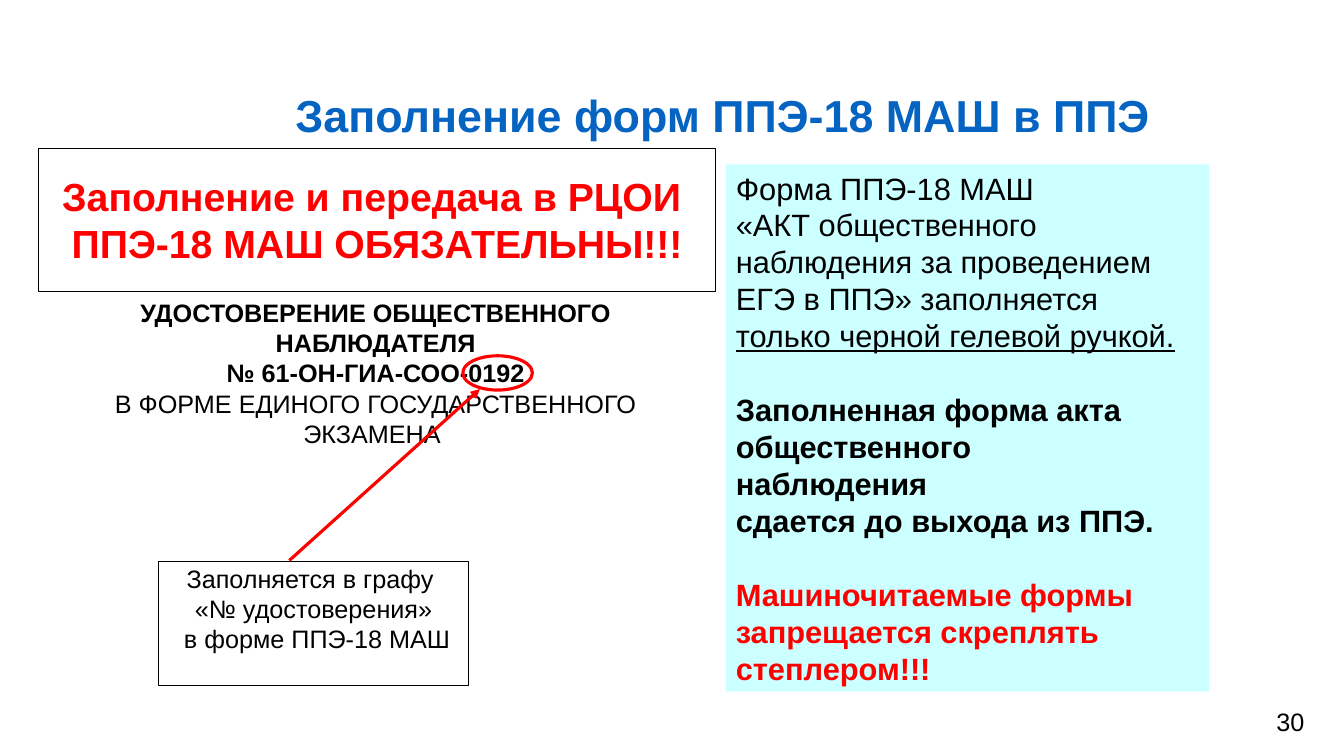
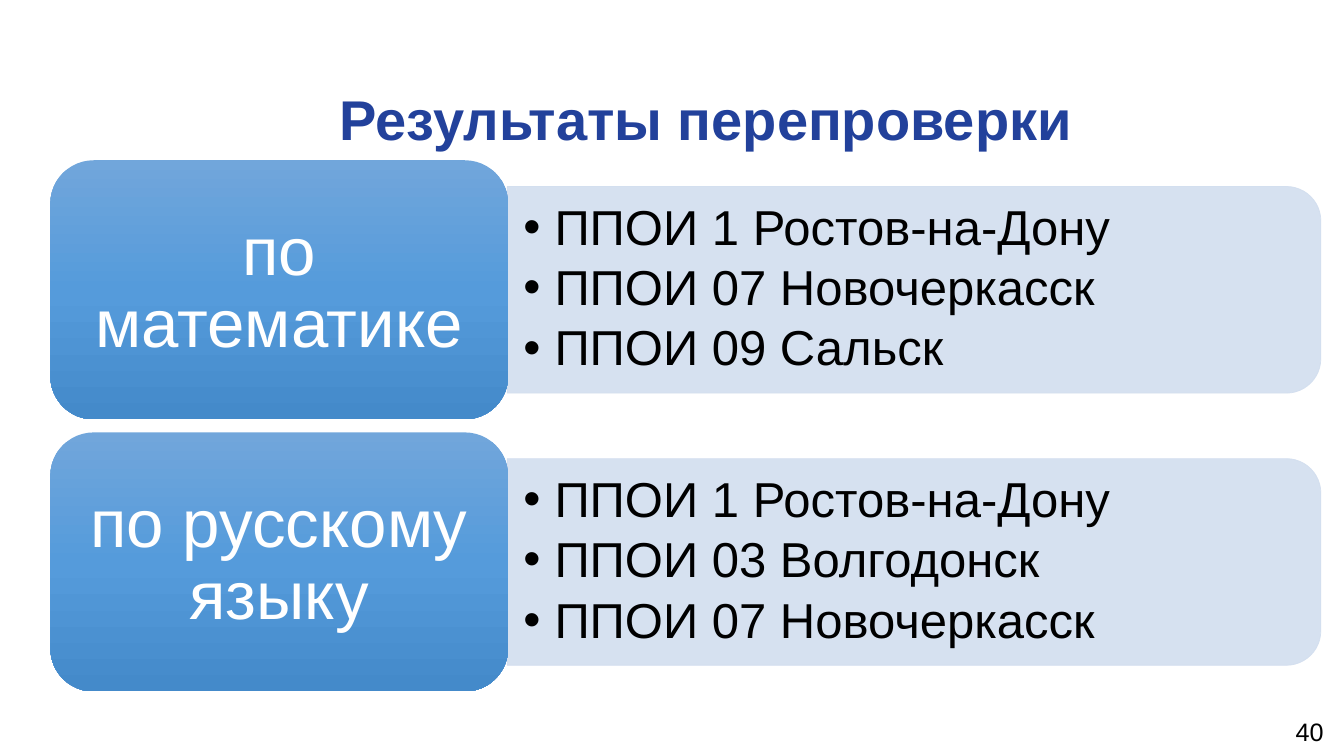
from dataclasses import dataclass
from typing import Optional

from lxml import etree
from pptx import Presentation
from pptx.dml.color import RGBColor
from pptx.enum.shapes import MSO_CONNECTOR, MSO_SHAPE as SHAPE
from pptx.enum.text import MSO_ANCHOR as ANCHOR, PP_ALIGN as ALIGN
from pptx.oxml.ns import qn
from pptx.util import Inches, Pt

BLACK = RGBColor(0x00, 0x00, 0x00)
WHITE = RGBColor(0xFF, 0xFF, 0xFF)
RED = RGBColor(0xFF, 0x00, 0x00)
LINK_BLUE = RGBColor(0x05, 0x63, 0xC1)
NAVY = RGBColor(0x22, 0x41, 0x9B)
CYAN = RGBColor(0xCC, 0xFF, 0xFF)
PALE_BLUE = RGBColor(0xD2, 0xDE, 0xEF)
CARD_STOPS = (
    (0, RGBColor(0x71, 0xA6, 0xDB)),
    (50, RGBColor(0x55, 0x9B, 0xDB)),
    (100, RGBColor(0x44, 0x8A, 0xCA)),
)
FONT = "Arial"


@dataclass(frozen=True)
class Box:
    x: float
    y: float
    w: float
    h: float

    def emu(self) -> tuple:
        return tuple(Inches(v) for v in (self.x, self.y, self.w, self.h))


@dataclass(frozen=True)
class Run:
    text: str
    size: float = 18
    color: RGBColor = BLACK
    bold: bool = False
    underline: bool = False


@dataclass(frozen=True)
class Para:
    runs: tuple
    align: ALIGN = ALIGN.LEFT
    before: float = 0
    after: float = 0
    spacing: Optional[float] = None
    bullet: bool = False


@dataclass(frozen=True)
class Subject:
    name: str
    points: tuple


SUBJECTS = (
    Subject("по математике",
            ("ППОИ 1 Ростов-на-Дону", "ППОИ 07 Новочеркасск", "ППОИ 09 Сальск")),
    Subject("по русскому языку",
            ("ППОИ 1 Ростов-на-Дону", "ППОИ 03 Волгодонск", "ППОИ 07 Новочеркасск")),
)


def centered(text: str, **style) -> Para:
    return Para((Run(text, **style),), ALIGN.CENTER)


def add_bullet(p) -> None:
    pPr = p._p.get_or_add_pPr()
    pPr.set("marL", str(Inches(0.31)))
    pPr.set("indent", str(-Inches(0.31)))
    etree.SubElement(pPr, qn("a:buFont"), typeface=FONT)
    etree.SubElement(pPr, qn("a:buChar"), char="•")


def write(sp, paras, anchor=ANCHOR.TOP, wrap: bool = True,
          insets=(0.1, 0.05, 0.1, 0.05)) -> None:
    tf = sp.text_frame
    tf.word_wrap = wrap
    tf.vertical_anchor = anchor
    tf.margin_left, tf.margin_top, tf.margin_right, tf.margin_bottom = map(Inches, insets)
    for i, para in enumerate(paras):
        p = tf.add_paragraph() if i else tf.paragraphs[0]
        p.alignment = para.align
        if para.spacing:
            p.line_spacing = para.spacing
        if para.before:
            p.space_before = Pt(para.before)
        if para.after:
            p.space_after = Pt(para.after)
        if para.bullet:
            add_bullet(p)
        for run in para.runs:
            r = p.add_run()
            r.text = run.text
            r.font.name = FONT
            r.font.size = Pt(run.size)
            r.font.color.rgb = run.color
            r.font.bold = run.bold
            r.font.underline = run.underline


def add_text(s, box: Box, paras, **layout):
    sp = s.shapes.add_textbox(*box.emu())
    write(sp, paras, **layout)
    return sp


def add_box(s, kind, box: Box, fill: Optional[RGBColor] = None,
            line: Optional[RGBColor] = None, width: float = 0.75):
    sp = s.shapes.add_shape(kind, *box.emu())
    sp.shadow.inherit = False
    if fill is None:
        sp.fill.background()
    else:
        sp.fill.solid()
        sp.fill.fore_color.rgb = fill
    if line is None:
        sp.line.fill.background()
    else:
        sp.line.color.rgb = line
        sp.line.width = Pt(width)
    return sp


def add_title(s, box: Box, text: str, size: float, color: RGBColor) -> None:
    add_text(s, box, [centered(text, size=size, color=color, bold=True)],
             anchor=ANCHOR.MIDDLE)


def add_page_number(s, box: Box, number: int, align=ALIGN.LEFT) -> None:
    add_text(s, box, [Para((Run(str(number)),), align)])


def add_arrow(s, start, end, color: RGBColor, width: float) -> None:
    c = s.shapes.add_connector(MSO_CONNECTOR.STRAIGHT, *map(Inches, start + end))
    c.line.color.rgb = color
    c.line.width = Pt(width)
    etree.SubElement(c.line._get_or_add_ln(), qn("a:tailEnd"), type="triangle")
    etree.SubElement(c._element.spPr, qn("a:effectLst"))


def set_alpha(sp, percent: int) -> None:
    for clr in sp._element.spPr.iter(qn("a:srgbClr")):
        etree.SubElement(clr, qn("a:alpha"), val=str(percent * 1000))


def set_gradient(sp, stops) -> None:
    spPr = sp._element.spPr
    grad = etree.Element(qn("a:gradFill"), rotWithShape="1")
    gs_list = etree.SubElement(grad, qn("a:gsLst"))
    for pos, color in stops:
        gs = etree.SubElement(gs_list, qn("a:gs"), pos=str(pos * 1000))
        etree.SubElement(gs, qn("a:srgbClr"), val=str(color))
    etree.SubElement(grad, qn("a:lin"), ang="5400000", scaled="0")
    spPr.replace(spPr.find(qn("a:noFill")), grad)


def add_subject(s, subject: Subject, top: float) -> None:
    card = Box(0.5, top, 4.54, 2.57)
    middle = top + card.h / 2
    bar_w, bar_h = 2.05, 8.07
    bar = add_box(s, SHAPE.ROUND_2_SAME_RECTANGLE,
                  Box(8.04, middle - bar_h / 2, bar_w, bar_h), PALE_BLUE, PALE_BLUE, 0.5)
    bar.rotation = 90
    set_alpha(bar, 90)
    points = [Para((Run(point, 35),), after=5.25, spacing=0.9, bullet=True)
              for point in subject.points]
    add_text(s, Box(card.x + card.w, middle - 0.925, 7.97, 1.85), points,
             anchor=ANCHOR.MIDDLE, insets=(0.15, 0.07, 0.15, 0.07))
    sp = add_box(s, SHAPE.ROUNDED_RECTANGLE, card)
    set_gradient(sp, CARD_STOPS)
    write(sp, [Para((Run(subject.name, 48, WHITE),), ALIGN.CENTER, spacing=0.9)],
          anchor=ANCHOR.MIDDLE, insets=(0.2, 0.1, 0.2, 0.1))


def build_form_slide(s) -> None:
    add_page_number(s, Box(12.56, 6.96, 0.75, 0.52), 30)
    add_title(s, Box(1.43, 0.77, 11.48, 0.74),
              "Заполнение форм ППЭ-18 МАШ в ППЭ", 32, LINK_BLUE)
    add_text(s, Box(0.58, 2.9, 6.29, 1.6), [
        centered("УДОСТОВЕРЕНИЕ ОБЩЕСТВЕННОГО НАБЛЮДАТЕЛЯ", bold=True),
        centered("№ 61-ОН-ГИА-СОО-0192", bold=True),
        centered("В ФОРМЕ ЕДИНОГО ГОСУДАРСТВЕННОГО ЭКЗАМЕНА "),
    ])

    rules = add_box(s, SHAPE.RECTANGLE, Box(7.2, 1.63, 4.79, 5.23), CYAN)
    size, gap = 22, 26.4
    write(rules, [
        Para((Run("Форма ППЭ-18 МАШ", size),)),
        Para((Run("«АКТ общественного наблюдения за проведением ЕГЭ в ППЭ» заполняется ", size),
              Run("только черной гелевой ручкой.", size, underline=True))),
        Para((Run("Заполненная форма акта общественного", size, bold=True),), before=gap),
        Para((Run("наблюдения", size, bold=True),)),
        Para((Run("сдается до выхода из ППЭ.", size, bold=True),)),
        Para((Run("Машиночитаемые формы запрещается скреплять степлером!!!",
                  size, RED, True),), before=gap),
    ])

    add_box(s, SHAPE.OVAL, Box(4.59, 3.53, 0.69, 0.34), line=RED, width=2.25)
    callout = add_box(s, SHAPE.RECTANGLE, Box(1.57, 5.57, 3.08, 1.23), WHITE, BLACK)
    write(callout, [
        centered("Заполняется в графу "),
        centered("«№ удостоверения»"),
        centered(" в форме ППЭ-18 МАШ"),
    ], anchor=ANCHOR.MIDDLE, wrap=False, insets=(0.1, 0.05, 0.1, 0.35))
    add_arrow(s, (2.87, 5.56), (4.76, 3.86), RED, 2.25)

    banner = add_box(s, SHAPE.RECTANGLE, Box(0.38, 1.47, 6.72, 1.42), WHITE, BLACK)
    write(banner, [
        centered("Заполнение и передача в РЦОИ ", size=28, color=RED, bold=True),
        centered("ППЭ-18 МАШ ОБЯЗАТЕЛЬНЫ!!!", size=28, color=RED, bold=True),
    ], anchor=ANCHOR.MIDDLE, wrap=False)


def build_results_slide(s) -> None:
    add_page_number(s, Box(12.65, 7.06, 0.68, 0.44), 40, ALIGN.CENTER)
    add_title(s, Box(2.06, 0.84, 9.88, 0.67), "Результаты перепроверки", 40, NAVY)
    for i, subject in enumerate(SUBJECTS):
        add_subject(s, subject, 1.59 + i * 2.7)


def main() -> None:
    prs = Presentation()
    prs.slide_width, prs.slide_height = Inches(13.33), Inches(7.5)
    for build in (build_form_slide, build_results_slide):
        build(prs.slides.add_slide(prs.slide_layouts[6]))
    prs.save("out.pptx")


if __name__ == "__main__":
    main()
